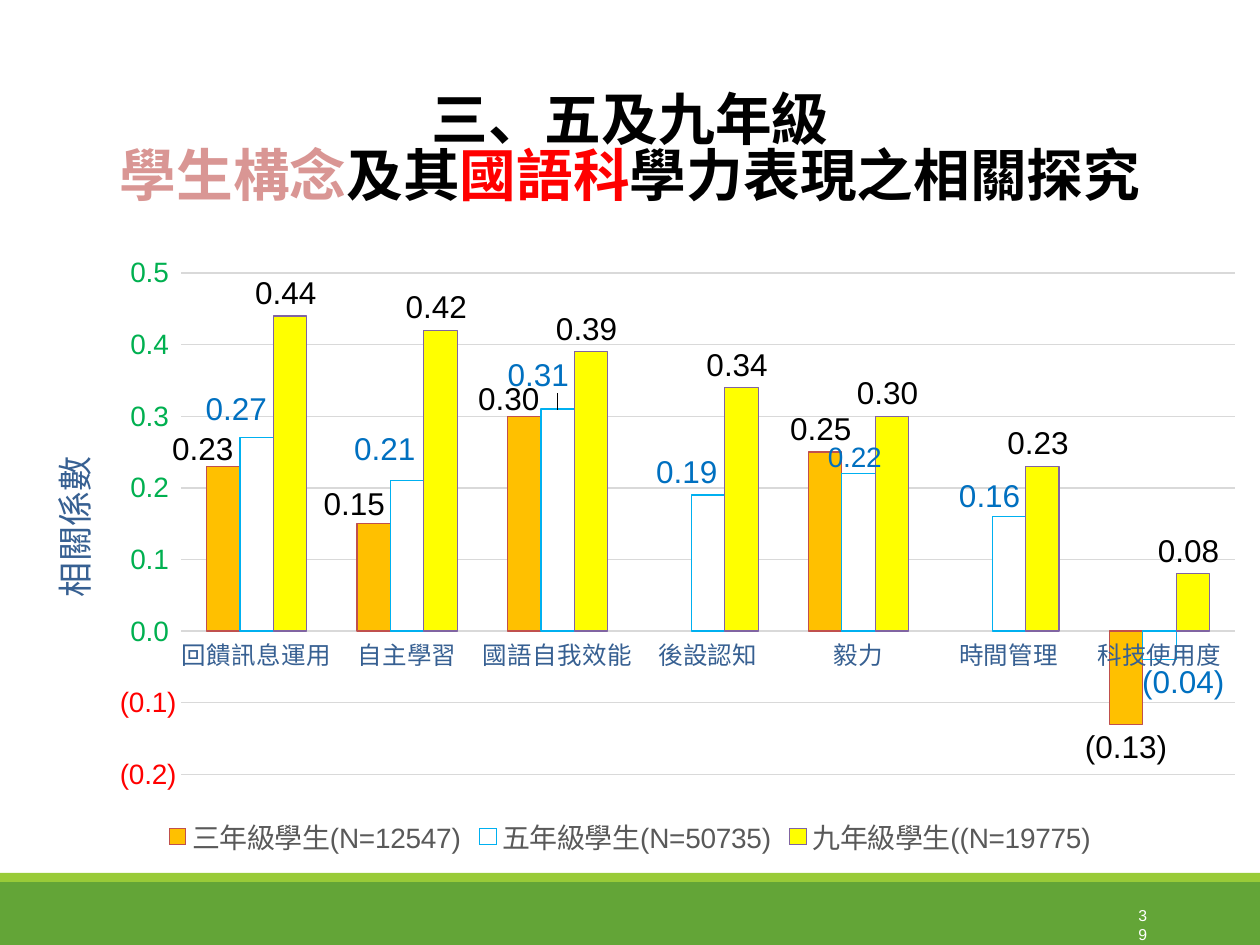
import dataclasses

import lxml.etree
import pptx
import pptx.chart.data
import pptx.dml.color
import pptx.enum.chart
import pptx.enum.shapes
import pptx.enum.text
import pptx.oxml
import pptx.oxml.ns
import pptx.util

PX = 914400 // 126  # EMU in one px
CHART = (0, 246, 1260, 616)


@dataclasses.dataclass(frozen=True)
class Theme:
    latin: str = "Arial"
    title: str = "Noto Sans CJK SC"
    axis: str = "Noto Sans CJK TC"
    black: str = "000000"
    white: str = "FFFFFF"
    red: str = "FF0000"
    rose: str = "D99694"
    navy: str = "376092"
    green: str = "00B050"
    blue: str = "0070C0"
    gray: str = "595959"
    grid: str = "D9D9D9"
    head: float = 32.4
    name: int = 20
    label: int = 18
    tick: int = 16
    cat: int = 14
    note: int = 9


@dataclasses.dataclass(frozen=True)
class Bar:
    x: int
    y: int
    w: int
    h: int
    fill: str


@dataclasses.dataclass(frozen=True)
class Group:
    """One series; shifts maps a point to its label offset in px."""
    name: str
    vals: tuple
    fill: str
    line: str
    text: str
    shifts: dict


T = Theme()
BARS = (
    Bar(0, 882, 1260, 63, "63A537"),
    Bar(0, 873, 1260, 9, "99CB38"),
)
TITLE = (
    (("三、五及九年級", T.black),),
    (("學生構念", T.rose), ("及其", T.black), ("國語科", T.red),
     ("學力表現之相關探究", T.black)),
)
CATS = ("回饋訊息運用", "自主學習", "國語自我效能", "後設認知", "毅力",
        "時間管理", "科技使用度")
GROUPS = (
    Group("三年級學生(N=12547)", (0.23, 0.15, 0.3, None, 0.25, None, -0.13),
          "FFC000", "C0504D", T.black, {0: (-16, 6), 1: (-15, 3), 2: (-11, 6)}),
    Group("五年級學生(N=50735)", (0.27, 0.21, 0.31, 0.19, 0.22, 0.16, -0.04),
          T.white, "00B0F0", T.blue,
          {0: (-16, -6), 1: (-18, -9), 2: (-15, -11), 3: (-17, 0),
           4: (0, 4), 5: (-15, 2), 6: (24, 0)}),
    Group("九年級學生((N=19775)", (0.44, 0.42, 0.39, 0.34, 0.3, 0.23, 0.08),
          "FFFF00", "8064A2", T.black, {}),
)
SMALL = (1, 4)  # series and point of the one smaller label
FMT = r"0.00_);[Red]\(0.00\)"


def rgb(code: str):
    return pptx.dml.color.RGBColor.from_string(code)


def style(font, size: float, code: str, face: str = T.latin, bold=False) -> None:
    font.size = pptx.util.Pt(size)
    font.color.rgb = rgb(code)
    font.name = face
    font.bold = bold


def face_east(run, face: str) -> None:
    """Set the East Asian typeface of a run."""
    props = run.font._element
    node = lxml.etree.SubElement(props, pptx.oxml.ns.qn("a:ea"))
    node.set("typeface", face)


def layout(**vals):
    """Make a manual chart layout from its named values."""
    body = "".join(f'<c:{key} val="{val}"/>' for key, val in vals.items())
    return pptx.oxml.parse_xml(
        f'<c:layout {pptx.oxml.ns.nsdecls("c")}>'
        f"<c:manualLayout>{body}</c:manualLayout></c:layout>")


def add_bar(slide, bar: Bar) -> None:
    box = [v * PX for v in (bar.x, bar.y, bar.w, bar.h)]
    shape = slide.shapes.add_shape(pptx.enum.shapes.MSO_SHAPE.RECTANGLE, *box)
    shape.shadow.inherit = False
    shape.fill.solid()
    shape.fill.fore_color.rgb = rgb(bar.fill)
    shape.line.fill.background()


def add_box(slide, x: int, y: int, w: int, h: int):
    frame = slide.shapes.add_textbox(x * PX, y * PX, w * PX, h * PX).text_frame
    frame.word_wrap = True
    return frame


def add_title(slide) -> None:
    frame = add_box(slide, 0, 83, 1260, 137)
    frame.vertical_anchor = pptx.enum.text.MSO_ANCHOR.MIDDLE
    para = frame.paragraphs[0]
    para.alignment = pptx.enum.text.PP_ALIGN.CENTER
    para.line_spacing = 0.83
    for row, parts in enumerate(TITLE):
        if row:
            para.add_line_break()
        for text, code in parts:
            run = para.add_run()
            run.text = text
            style(run.font, T.head, code, T.title, True)
            face_east(run, T.title)


def add_page(slide) -> None:
    para = add_box(slide, 1126, 900, 32, 31).paragraphs[0]
    para.text = "39"
    para.alignment = pptx.enum.text.PP_ALIGN.RIGHT
    style(para.runs[0].font, T.note, T.white)


def set_group(series, group: Group, num: int) -> None:
    series.invert_if_negative = False
    series.format.fill.solid()
    series.format.fill.fore_color.rgb = rgb(group.fill)
    series.format.line.color.rgb = rgb(group.line)
    series.format.line.width = pptx.util.Pt(0.75)
    tags = series.data_labels
    tags.show_value = True
    tags.number_format = FMT
    tags.number_format_is_linked = False
    tags.position = pptx.enum.chart.XL_LABEL_POSITION.OUTSIDE_END
    style(tags.font, T.label, group.text)
    for idx, (dx, dy) in group.shifts.items():
        tag = series.points[idx].data_label
        tag.position = pptx.enum.chart.XL_LABEL_POSITION.OUTSIDE_END
        style(tag.font, T.tick if (num, idx) == SMALL else T.label, group.text)
        node = tags._element.xpath(f"c:dLbl[c:idx/@val={idx}]")[0]
        form = lxml.etree.Element(pptx.oxml.ns.qn("c:numFmt"))
        form.set("formatCode", FMT)
        form.set("sourceLinked", "0")
        node.insert(1, layout(x=round(dx / CHART[2], 4), y=round(dy / CHART[3], 4)))
        node.insert(2, form)


def set_axes(chart) -> None:
    kinds = pptx.enum.chart
    cat, val = chart.category_axis, chart.value_axis
    for axis, size, code in ((cat, T.cat, T.navy), (val, T.tick, T.green)):
        axis.major_tick_mark = kinds.XL_TICK_MARK.NONE
        axis.format.line.fill.background()
        style(axis.tick_labels.font, size, code)
    val.minimum_scale, val.maximum_scale, val.major_unit = -0.2, 0.5, 0.1
    val.tick_labels.number_format = r"#,##0.0_);[Red]\(#,##0.0\)"
    val.tick_labels.number_format_is_linked = False
    line = val.major_gridlines.format.line
    line.color.rgb = rgb(T.grid)
    line.width = pptx.util.Pt(0.75)
    para = val.axis_title.text_frame.paragraphs[0]
    para.text = "相關係數"
    style(para.runs[0].font, T.name, T.navy, T.axis)
    face_east(para.runs[0], T.axis)
    old = val.axis_title._element.find(pptx.oxml.ns.qn("c:layout"))
    if old is not None:
        val.axis_title._element.remove(old)
    val.axis_title._element.insert(1, layout(xMode="edge", yMode="edge", x=0.03, y=0.33))


def add_chart(slide) -> None:
    data = pptx.chart.data.CategoryChartData()
    data.categories = CATS
    for group in GROUPS:
        data.add_series(group.name, group.vals)
    kind = pptx.enum.chart.XL_CHART_TYPE.COLUMN_CLUSTERED
    chart = slide.shapes.add_chart(kind, *[v * PX for v in CHART], data).chart
    style(chart.font, 10, T.black)
    chart.has_title = False
    chart.has_legend = True
    chart.legend.position = pptx.enum.chart.XL_LEGEND_POSITION.BOTTOM
    chart.legend.include_in_layout = False
    style(chart.legend.font, T.tick, T.gray)
    plot = chart.plots[0]
    plot.gap_width, plot.overlap, plot.vary_by_categories = 150, 0, False
    for num, group in enumerate(GROUPS):
        set_group(plot.series[num], group, num)
    set_axes(chart)
    area = chart._chartSpace.chart.plotArea
    for old in area.findall(pptx.oxml.ns.qn("c:layout")):
        area.remove(old)
    area.insert(0, layout(layoutTarget="inner", xMode="edge", yMode="edge",
                          x=0.144, y=0.044, w=0.836, h=0.814))


def main() -> None:
    deck = pptx.Presentation()
    deck.slide_width, deck.slide_height = 1260 * PX, 945 * PX
    slide = deck.slides.add_slide(deck.slide_layouts[6])
    for bar in BARS:
        add_bar(slide, bar)
    add_title(slide)
    add_chart(slide)
    add_page(slide)
    deck.save("out.pptx")


if __name__ == "__main__":
    main()
